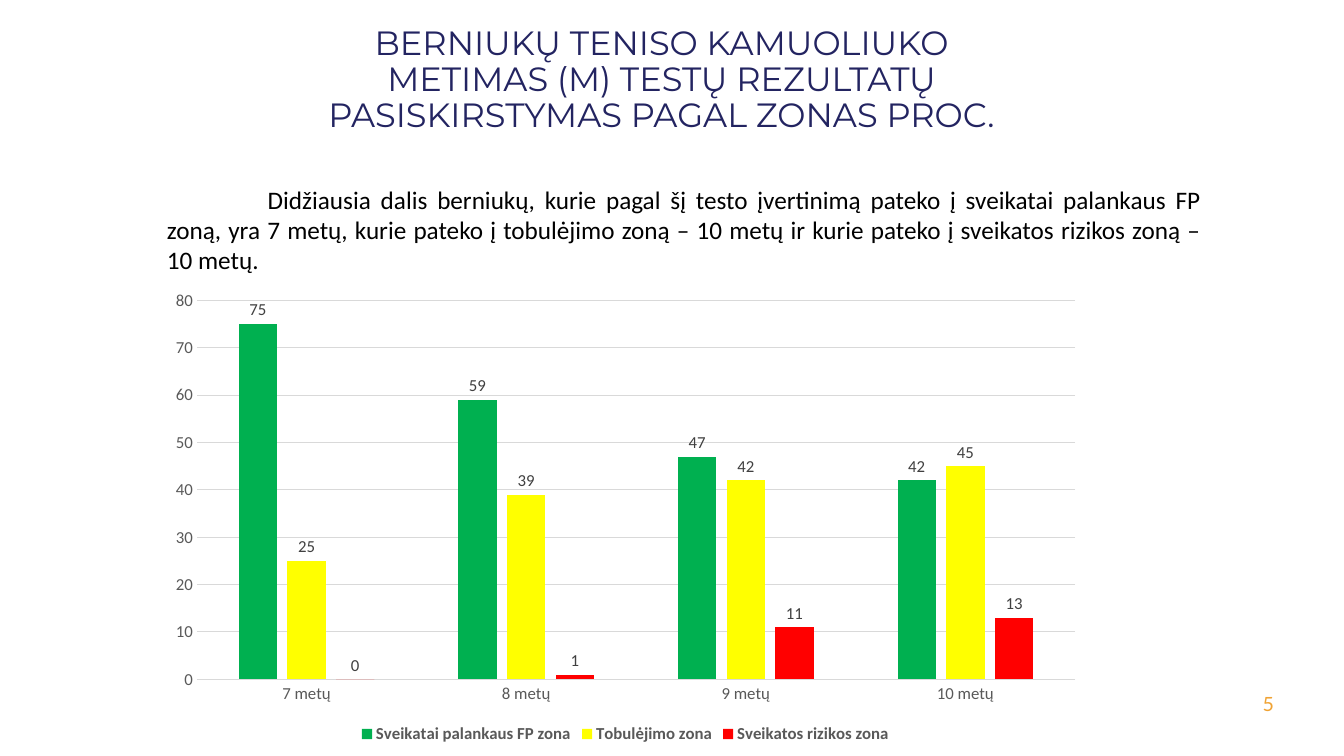
import pptx
import pptx.chart.data
import pptx.dml.color
import pptx.enum.chart
import pptx.enum.text
import pptx.util

PX = 914400 / 100.8
THEME = {
    "title": ("Montserrat", 24, "232461"),
    "body": ("Calibri", 18, "000000"),
    "number": ("Lato", 14, "F0A334"),
    "chart": ("Calibri", 10, "000000"),
    "axis": ("Calibri", 12, "595959"),
    "label": ("Calibri", 12, "404040"),
    "grid": "D9D9D9",
    "zones": ["00B050", "FFFF00", "FF0000"],
}
ALIGN = pptx.enum.text.PP_ALIGN
rgb = pptx.dml.color.RGBColor.from_string


def box(*lengths):
    """Turn px lengths into EMU."""
    return [round(n * PX) for n in lengths]


def style(font, role):
    font.name, size, color = THEME[role]
    font.size = pptx.util.Pt(size)
    font.color.rgb = rgb(color)


prs = pptx.Presentation()
prs.slide_width, prs.slide_height = box(1344, 756)
s = prs.slides.add_slide(prs.slide_layouts[5])

# Texts
title = s.shapes.title
title.left, title.top, title.width, title.height = box(285, 21, 753, 139)
number = s.shapes.add_textbox(*box(1232, 684, 52, 40))
body = s.shapes.add_textbox(*box(157, 179, 1054, 102))
texts = [
    (title, "title", ALIGN.CENTER,
     "BERNIUKŲ TENISO KAMUOLIUKO METIMAS (M) TESTŲ REZULTATŲ "
     "PASISKIRSTYMAS PAGAL ZONAS PROC."),
    (number, "number", ALIGN.RIGHT, "5"),
    (body, "body", ALIGN.JUSTIFY,
     "Didžiausia dalis berniukų, kurie pagal šį testo įvertinimą pateko į "
     "sveikatai palankaus FP zoną, yra 7 metų, kurie pateko į tobulėjimo zoną "
     "– 10 metų ir kurie pateko į sveikatos rizikos zoną – 10 metų."),
]
for sp, role, align, text in texts:
    tf = sp.text_frame
    tf.text = text
    tf.word_wrap = True
    tf.auto_size = pptx.enum.text.MSO_AUTO_SIZE.NONE
    tf.vertical_anchor = pptx.enum.text.MSO_ANCHOR.TOP
    p = tf.paragraphs[0]
    p.alignment = align
    style(p.runs[0].font, role)
title.text_frame.paragraphs[0].line_spacing = 0.9
number.text_frame.vertical_anchor = pptx.enum.text.MSO_ANCHOR.MIDDLE
first_line = body.text_frame.paragraphs[0]._p.get_or_add_pPr()
first_line.set("indent", str(pptx.util.Inches(1)))

# Chart of zones by age
data = pptx.chart.data.CategoryChartData()
data.categories = ["7 metų", "8 metų", "9 metų", "10 metų"]
data.add_series("Sveikatai palankaus FP zona", [75, 59, 47, 42])
data.add_series("Tobulėjimo zona", [25, 39, 42, 45])
data.add_series("Sveikatos rizikos zona", [0, 1, 11, 13])
chart = s.shapes.add_chart(
    pptx.enum.chart.XL_CHART_TYPE.COLUMN_CLUSTERED,
    *box(157, 281, 937, 467), data).chart
style(chart.font, "chart")
chart.has_title = False
chart.has_legend = True
chart.legend.position = pptx.enum.chart.XL_LEGEND_POSITION.BOTTOM
chart.legend.include_in_layout = False
style(chart.legend.font, "axis")
chart.legend.font.bold = True

for axis in (chart.category_axis, chart.value_axis):
    axis.major_tick_mark = pptx.enum.chart.XL_TICK_MARK.NONE
    axis.minor_tick_mark = pptx.enum.chart.XL_TICK_MARK.NONE
    style(axis.tick_labels.font, "axis")
chart.value_axis.minimum_scale = 0
chart.value_axis.maximum_scale = 80
chart.value_axis.major_unit = 10
chart.value_axis.format.line.fill.background()
for line in (chart.category_axis.format.line,
             chart.value_axis.major_gridlines.format.line):
    line.color.rgb = rgb(THEME["grid"])
    line.width = pptx.util.Pt(0.75)

plot = chart.plots[0]
plot.gap_width = 219
plot.overlap = -27
plot.vary_by_categories = False
for zone, color in zip(plot.series, THEME["zones"]):
    zone.format.fill.solid()
    zone.format.fill.fore_color.rgb = rgb(color)
    zone.invert_if_negative = False
    labels = zone.data_labels
    labels.show_value = True
    labels.position = pptx.enum.chart.XL_LABEL_POSITION.OUTSIDE_END
    style(labels.font, "label")

prs.save("out.pptx")
